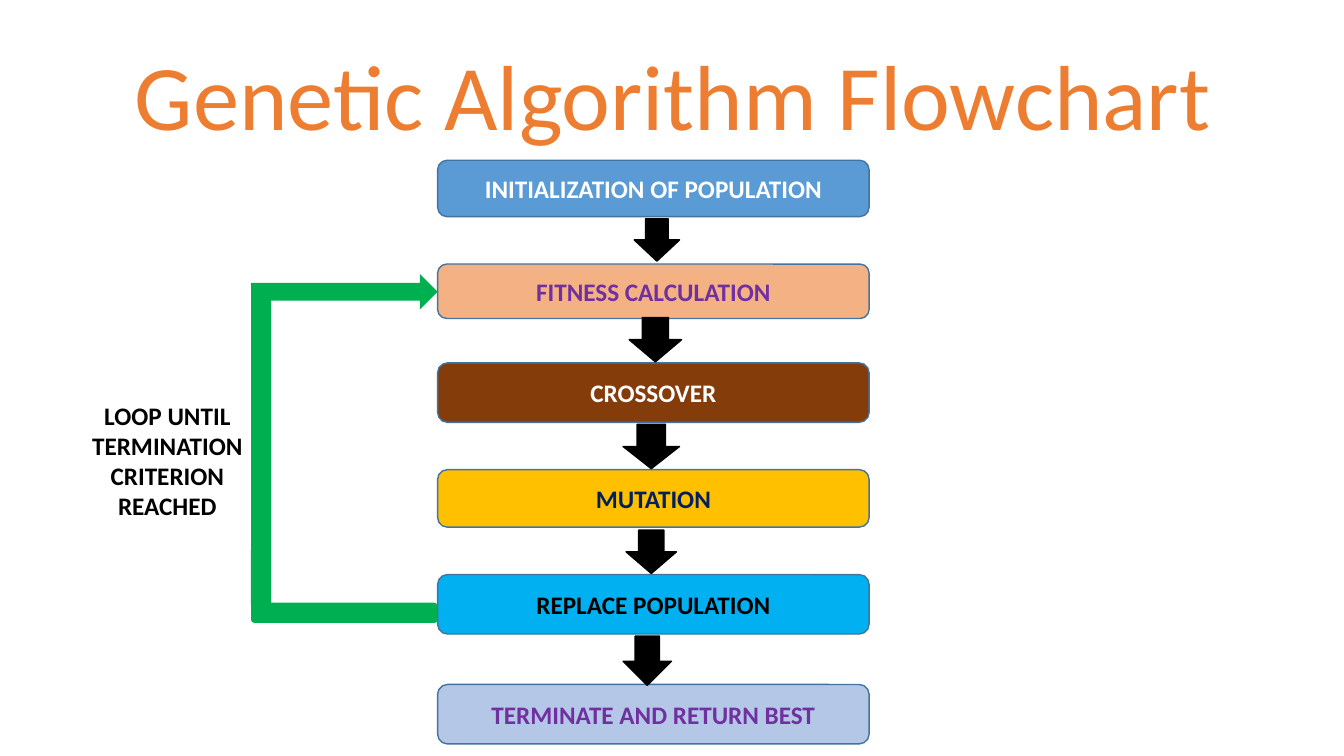
from pptx import Presentation
from pptx import util as u
from pptx.dml.color import RGBColor
from pptx.enum import shapes, text

KIND = shapes.MSO_SHAPE
STEPS = [
    ("INITIALIZATION OF POPULATION", 1.59, 0.56, "5B9BD5", "FFFFFF"),
    ("FITNESS CALCULATION", 2.62, 0.54, "F4B183", "7030A0"),
    ("CROSSOVER", 3.6, 0.59, "843C0B", "FFFFFF"),
    ("MUTATION", 4.66, 0.57, "FFC000", "002060"),
    ("REPLACE POPULATION", 5.7, 0.59, "00B0F0", "000000"),
    ("TERMINATE AND RETURN BEST", 6.79, 0.59, "B4C7E7", "7030A0"),
]
ARROWS = [
    (6.29, 2.17, 0.45, 0.42),
    (6.24, 3.15, 0.52, 0.44),
    (6.18, 4.21, 0.56, 0.44),
    (6.21, 5.26, 0.5, 0.43),
    (6.18, 6.31, 0.48, 0.49),
]
LOOP = [
    (KIND.ROUNDED_RECTANGLE, (2.49, 5.98, 1.85, 0.2)),
    (KIND.ROUNDED_RECTANGLE, (2.49, 2.83, 0.2, 3.2)),
    (KIND.RIGHT_ARROW, (2.49, 2.72, 1.85, 0.35)),
]


def color(code):
    return RGBColor.from_string(code)


class Chart:
    face = "Calibri"
    size = 18
    edge = "43739E"
    black = "000000"
    green = "00B050"

    def __init__(self, deck):
        self.slide = deck.slides.add_slide(deck.slide_layouts[5])

    def words(self, frame, words, ink, size, bold, anchor):
        frame.word_wrap = True
        frame.vertical_anchor = anchor
        line = frame.paragraphs[0]
        line.text = words
        line.alignment = text.PP_ALIGN.CENTER
        line.font.name = self.face
        line.font.size = u.Pt(size)
        line.font.bold = bold
        line.font.color.rgb = color(ink)
        return line

    def title(self, words, box, ink):
        head = self.slide.shapes.title
        head.left, head.top, head.width, head.height = map(u.Inches, box)
        line = self.words(head.text_frame, words, ink, 66, False,
                          text.MSO_ANCHOR.MIDDLE)
        line.line_spacing = 0.9

    def shape(self, kind, box, fill, edge=None):
        item = self.slide.shapes.add_shape(kind, *map(u.Inches, box))
        item.shadow.inherit = False
        item.fill.solid()
        item.fill.fore_color.rgb = color(fill)
        if edge:
            item.line.color.rgb = color(edge)
            item.line.width = u.Pt(1)
        else:
            item.line.fill.background()
        return item

    def step(self, words, top, high, fill, ink):
        item = self.shape(KIND.ROUNDED_RECTANGLE, (4.34, top, 4.28, high),
                          fill, self.edge)
        self.words(item.text_frame, words, ink, self.size, True,
                   text.MSO_ANCHOR.MIDDLE)

    def arrow(self, box):
        self.shape(KIND.DOWN_ARROW, box, self.black, self.black)

    def label(self, words, box):
        item = self.slide.shapes.add_textbox(*map(u.Inches, box))
        self.words(item.text_frame, words, self.black, self.size, True,
                   text.MSO_ANCHOR.TOP)


def main():
    deck = Presentation()
    deck.slide_width = u.Inches(13.33)
    deck.slide_height = u.Inches(7.5)
    chart = Chart(deck)
    chart.title("Genetic Algorithm Flowchart", (0.92, 0.4, 11.51, 1.19), "ED7D31")
    for step in STEPS:
        chart.step(*step)
    for box in ARROWS:
        chart.arrow(box)
    for kind, box in LOOP:
        chart.shape(kind, box, chart.green)
    chart.label("LOOP UNTIL TERMINATION CRITERION REACHED", (0.76, 3.92, 1.8, 1.34))
    deck.save("out.pptx")


if __name__ == "__main__":
    main()
